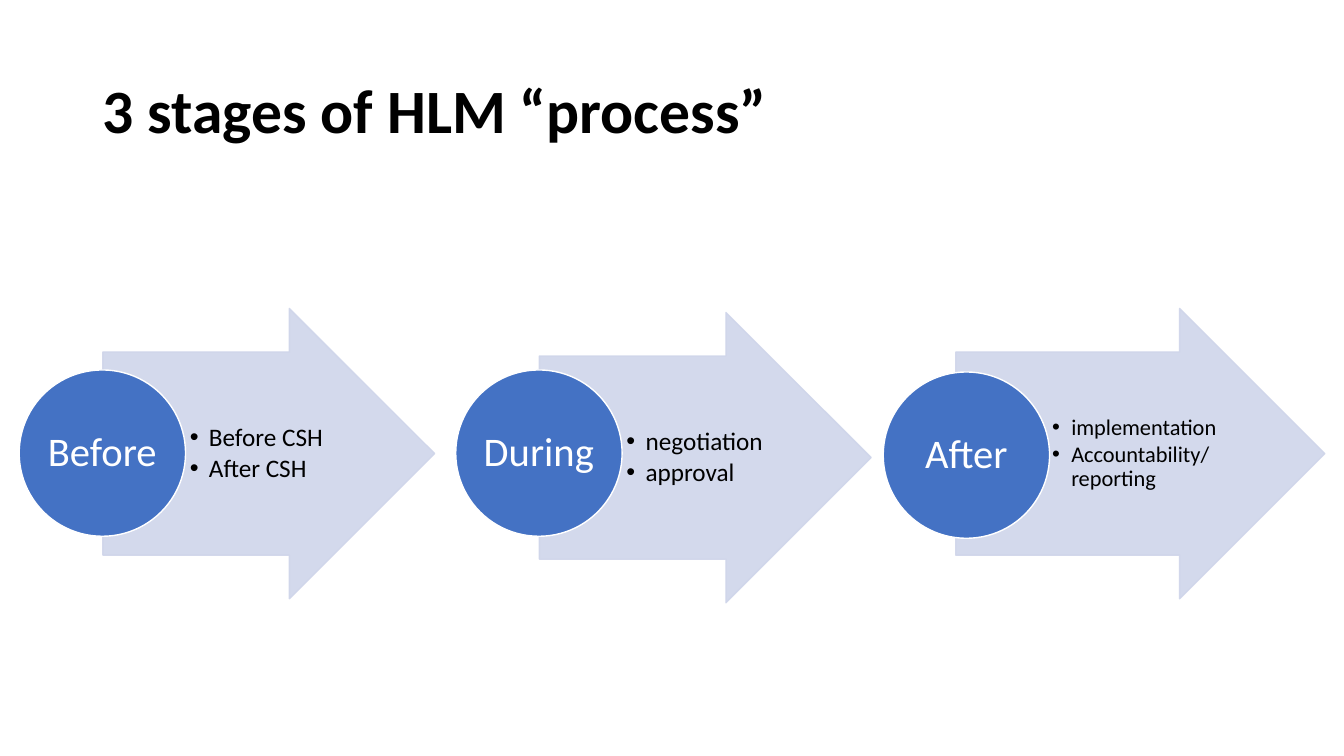
from lxml import etree
from pptx import Presentation
from pptx.dml.color import RGBColor
from pptx.enum.shapes import MSO_SHAPE
from pptx.enum.text import MSO_ANCHOR, PP_ALIGN
from pptx.oxml.ns import qn
from pptx.util import Inches, Pt

BLACK = RGBColor(0x00, 0x00, 0x00)
WHITE = RGBColor(0xFF, 0xFF, 0xFF)
BLUE = RGBColor(0x44, 0x72, 0xC4)
PALE_BLUE = RGBColor(0xCF, 0xD5, 0xEA)

ARROW_HEIGHT = 2.88
CIRCLE_SIZE = 1.65
SHAFT = 0.7
HEAD = 0.5

# label, circle (left, top), arrow (left, top, width), bullet size, bullets
STAGES = [
    ("Before", (0.19, 3.67), (1.02, 3.06, 3.29), 18, ["Before CSH", "After CSH"]),
    ("During", (4.52, 3.67), (5.35, 3.1, 3.29), 18, ["negotiation", "approval"]),
    ("After", (8.76, 3.69), (9.48, 3.06, 3.66), 16,
     ["implementation", "Accountability/ reporting"]),
]


def set_frame(tf, side, end):
    """Wrap and centre the text vertically, with side and end margins in inches."""
    margins = {"margin_left": side, "margin_right": side,
               "margin_top": end, "margin_bottom": end}
    for name, value in margins.items():
        setattr(tf, name, Inches(value))
    tf.word_wrap = True
    tf.vertical_anchor = MSO_ANCHOR.MIDDLE


def write(p, text, size, color, bold=False):
    p.line_spacing = 0.9
    r = p.add_run()
    r.text = text
    for name, value in {"name": "Calibri", "size": Pt(size), "bold": bold}.items():
        setattr(r.font, name, value)
    r.font.color.rgb = color


def add_bullet(p):
    pPr = p._p.get_or_add_pPr()
    pPr.set("marL", str(Inches(0.19)))
    pPr.set("indent", str(-Inches(0.19)))
    etree.SubElement(pPr, qn("a:buFont")).set("typeface", "Arial")
    etree.SubElement(pPr, qn("a:buChar")).set("char", "•")


def add_filled(s, kind, box, fill, line):
    sp = s.shapes.add_shape(kind, *map(Inches, box))
    sp.shadow.inherit = False
    sp.fill.solid()
    sp.fill.fore_color.rgb = fill
    sp.line.color.rgb = line
    sp.line.width = Pt(1)
    return sp


def add_title(s, text):
    tf = s.shapes.add_textbox(*map(Inches, (0.92, 0.4, 11.5, 1.45))).text_frame
    set_frame(tf, 0.1, 0.05)
    write(tf.paragraphs[0], text, 44, BLACK, bold=True)


def add_arrow(s, left, top, width):
    sp = add_filled(s, MSO_SHAPE.RIGHT_ARROW, (left, top, width, ARROW_HEIGHT),
                    PALE_BLUE, PALE_BLUE)
    sp.adjustments[0] = SHAFT
    sp.adjustments[1] = HEAD
    for color in sp._element.spPr.iter(qn("a:srgbClr")):
        etree.SubElement(color, qn("a:alpha")).set("val", "90000")


def add_bullets(s, left, top, width, size, items):
    """List the items on the shaft of the arrow with the given place and width."""
    height = ARROW_HEIGHT * SHAFT
    box = (left + width / 4, top + (ARROW_HEIGHT - height) / 2, width * 0.49, height)
    tf = s.shapes.add_textbox(*map(Inches, box)).text_frame
    set_frame(tf, 0.04, 0.01)
    for i, item in enumerate(items):
        p = tf.paragraphs[0] if i == 0 else tf.add_paragraph()
        add_bullet(p)
        p.space_after = Pt(size * 0.15)
        write(p, item, size, BLACK)


def add_circle(s, left, top, label):
    sp = add_filled(s, MSO_SHAPE.OVAL, (left, top, CIRCLE_SIZE, CIRCLE_SIZE),
                    BLUE, WHITE)
    tf = sp.text_frame
    set_frame(tf, 0.02, 0.02)
    p = tf.paragraphs[0]
    p.alignment = PP_ALIGN.CENTER
    write(p, label, 29, WHITE)


def main():
    prs = Presentation()
    prs.slide_width = Inches(13.33)
    prs.slide_height = Inches(7.5)
    s = prs.slides.add_slide(prs.slide_layouts[6])
    add_title(s, "3 stages of HLM “process”")
    for label, circle, arrow, size, items in STAGES:
        add_arrow(s, *arrow)
        add_bullets(s, *arrow, size, items)
        add_circle(s, *circle, label)
    prs.save("out.pptx")


if __name__ == "__main__":
    main()
